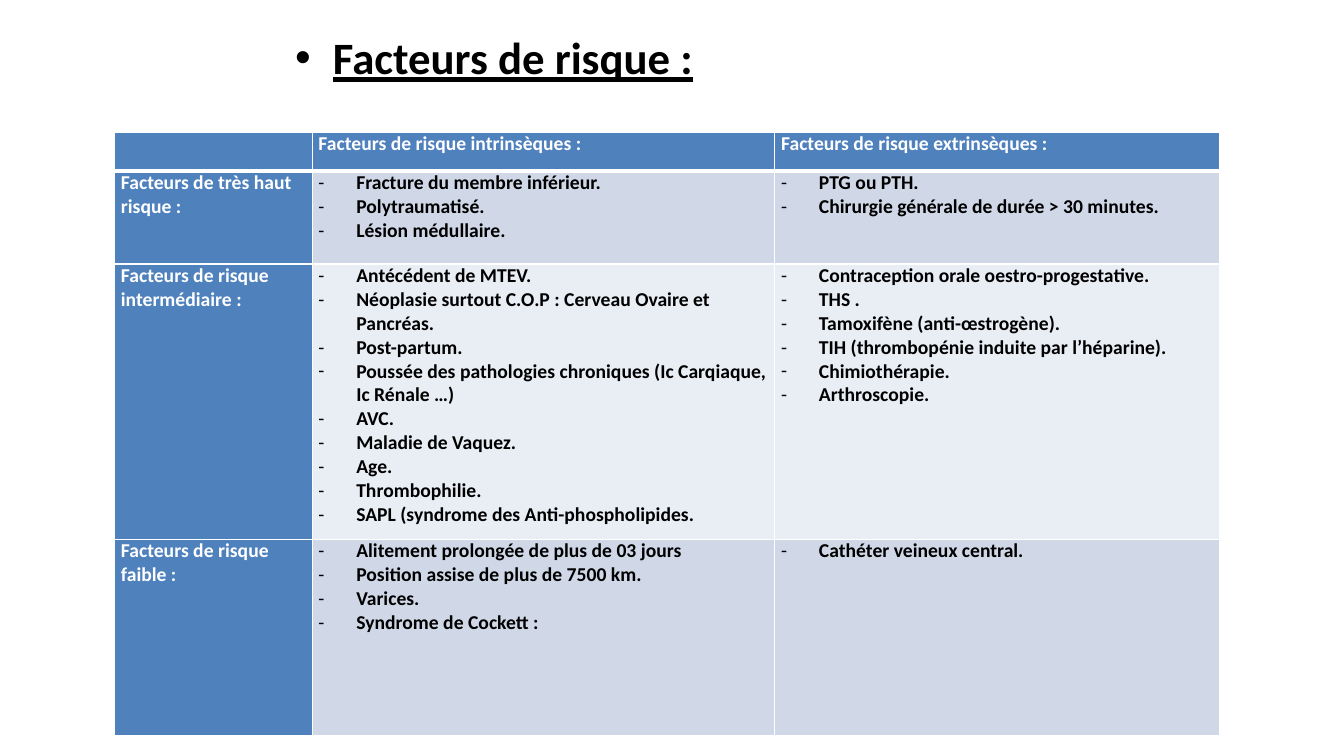
from lxml import etree
from pptx import Presentation
from pptx.dml.color import RGBColor
from pptx.oxml.ns import qn
from pptx.util import Pt

BLACK = RGBColor(0, 0, 0)
WHITE = RGBColor(255, 255, 255)
BLUE = RGBColor(0x4F, 0x81, 0xBD)
BAND_DARK = RGBColor(0xD0, 0xD8, 0xE8)
BAND_LIGHT = RGBColor(0xE9, 0xED, 0xF4)
FONT = "Calibri"
INDENT = 27

TITLE_BOX = (203.76, 18, 702, 470.16)
TABLE_BOX = (81.9, 94.32, 789.12, 430.56)
COLUMN_WIDTHS = (141.12, 330.48, 317.52)
ROW_HEIGHTS = (28.08, 66.24, 196.56, 140.4)

# Each table row: label, intrinsic factors, extrinsic factors
HEADINGS = ("Facteurs de risque intrinsèques :", "Facteurs de risque extrinsèques :")
RISK_LEVELS = [
    ("Facteurs de très haut risque :",
     ["Fracture du membre inférieur.", "Polytraumatisé.", "Lésion médullaire."],
     ["PTG ou PTH.", "Chirurgie générale de durée > 30 minutes."]),
    ("Facteurs de risque intermédiaire :",
     ["Antécédent de MTEV.",
      "Néoplasie surtout C.O.P : Cerveau Ovaire et Pancréas.",
      "Post-partum.",
      "Poussée des pathologies chroniques (Ic Carqiaque, Ic Rénale …)",
      "AVC.", "Maladie de Vaquez.", "Age.", "Thrombophilie.",
      "SAPL (syndrome des Anti-phospholipides."],
     ["Contraception orale oestro-progestative.", "THS .",
      "Tamoxifène (anti-œstrogène).",
      "TIH (thrombopénie induite par l’héparine).",
      "Chimiothérapie.", "Arthroscopie."]),
    ("Facteurs de risque faible :",
     ["Alitement prolongée de plus de 03 jours",
      "Position assise de plus de 7500 km.", "Varices.", "Syndrome de Cockett :"],
     ["Cathéter veineux central."]),
]


def write_lines(tf, lines, size=14, color=BLACK, underline=False, bullet=None):
    """Fill a text frame with bold paragraphs, bulleted on request."""
    for i, line in enumerate(lines):
        p = tf.paragraphs[0] if i == 0 else tf.add_paragraph()
        r = p.add_run()
        r.text = line
        r.font.name = FONT
        r.font.size = Pt(size)
        r.font.bold = True
        r.font.underline = underline
        r.font.color.rgb = color
        if bullet:
            pPr = p._p.get_or_add_pPr()
            pPr.set("marL", str(Pt(INDENT)))
            pPr.set("indent", str(-Pt(INDENT)))
            etree.SubElement(pPr, qn("a:buFont")).set("typeface", "Arial" if bullet == "•" else FONT)
            etree.SubElement(pPr, qn("a:buChar")).set("char", bullet)


def set_borders(cell, top=1, bottom=1):
    tcPr = cell._tc.get_or_add_tcPr()
    for side, width in (("L", 1), ("R", 1), ("T", top), ("B", bottom)):
        ln = etree.SubElement(tcPr, qn("a:ln" + side), w=str(Pt(width)))
        fill = etree.SubElement(ln, qn("a:solidFill"))
        etree.SubElement(fill, qn("a:srgbClr"), val=str(WHITE))


def style_cell(cell, fill, top=1, bottom=1):
    set_borders(cell, top, bottom)
    cell.fill.solid()
    cell.fill.fore_color.rgb = fill
    cell.margin_left = cell.margin_right = Pt(4.5)
    cell.margin_top = cell.margin_bottom = 0


def add_title(slide, x, y, w, h):
    tf = slide.shapes.add_textbox(Pt(x), Pt(y), Pt(w), Pt(h)).text_frame
    tf.word_wrap = True
    write_lines(tf, ["Facteurs de risque :"], size=32, underline=True, bullet="•")


def add_risk_table(slide, x, y, w, h):
    table = slide.shapes.add_table(len(ROW_HEIGHTS), len(COLUMN_WIDTHS),
                                   Pt(x), Pt(y), Pt(w), Pt(h)).table
    for column, width in zip(table.columns, COLUMN_WIDTHS):
        column.width = Pt(width)
    for row, height in zip(table.rows, ROW_HEIGHTS):
        row.height = Pt(height)

    # Header row, with an empty corner
    for c in range(len(COLUMN_WIDTHS)):
        cell = table.cell(0, c)
        style_cell(cell, BLUE, bottom=3)
        if c > 0:
            write_lines(cell.text_frame, [HEADINGS[c - 1]], color=WHITE)

    # One banded row per risk level
    for i, (label, *factor_lists) in enumerate(RISK_LEVELS, start=1):
        top = 3 if i == 1 else 1
        band = BAND_DARK if i % 2 else BAND_LIGHT
        cell = table.cell(i, 0)
        style_cell(cell, BLUE, top=top)
        write_lines(cell.text_frame, [label], color=WHITE)
        for c, factors in enumerate(factor_lists, start=1):
            cell = table.cell(i, c)
            style_cell(cell, band, top=top)
            write_lines(cell.text_frame, factors, bullet="-")


def main():
    prs = Presentation()
    prs.slide_width, prs.slide_height = Pt(960), Pt(540)
    s = prs.slides.add_slide(prs.slide_layouts[6])
    add_title(s, *TITLE_BOX)
    add_risk_table(s, *TABLE_BOX)
    prs.save("out.pptx")


if __name__ == "__main__":
    main()
